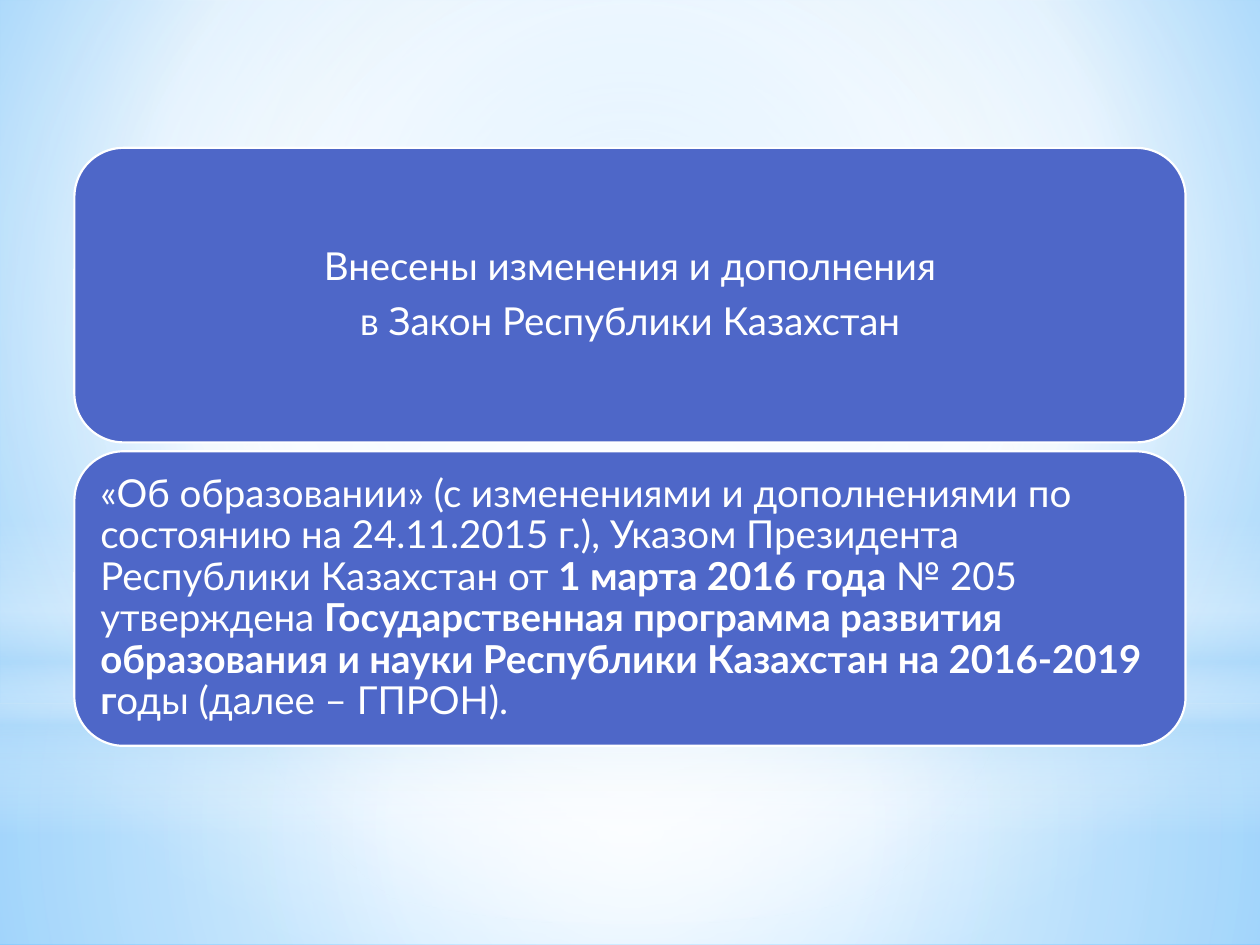
from lxml.etree import SubElement
from pptx import Presentation
from pptx.dml.color import RGBColor
from pptx.enum.shapes import MSO_SHAPE
from pptx.enum.text import MSO_ANCHOR, PP_ALIGN
from pptx.oxml.ns import qn
from pptx.util import Pt

WHITE = RGBColor(0xFF, 0xFF, 0xFF)
CARD_BLUE = RGBColor(0x4E, 0x67, 0xC8)
PALE_BLUE = RGBColor(0xB4, 0xDC, 0xFA)
SKY = RGBColor(0x9E, 0xD5, 0xFF)
DEEP_SKY = RGBColor(0x5B, 0xB9, 0xFF)

PAGE_WIDTH, PAGE_HEIGHT = 720, 540
CARD_LEFT, CARD_TOP, CARD_WIDTH, CARD_HEIGHT = 42.5, 84.5, 635, 168.3
CARD_PITCH = 173.4
CENTRE = (50, 50, 50, 50)

HEADING = [
    [("Внесены изменения и дополнения", False)],
    [("в Закон Республики Казахстан", False)],
]
DETAILS = [[
    ("«Об образовании» (с изменениями и дополнениями по состоянию на "
     "24.11.2015 г.), Указом Президента Республики Казахстан от ", False),
    ("1 марта 2016 года ", True),
    ("№ 205 утверждена ", False),
    ("Государственная программа развития образования и науки "
     "Республики Казахстан на 2016-2019 г", True),
    ("оды (далее – ГПРОН).", False),
]]


def set_gradient(fill, owner, stops, focus=None):
    fill.solid()
    fill.fore_color.rgb = WHITE
    solid = owner.find(".//" + qn("a:solidFill"))
    gradient = solid.makeelement(qn("a:gradFill"), {"rotWithShape": "1"})
    stop_list = SubElement(gradient, qn("a:gsLst"))
    for position, color, opacity in stops:
        stop = SubElement(stop_list, qn("a:gs"), pos=str(position * 1000))
        shade = SubElement(stop, qn("a:srgbClr"), val=str(color))
        if opacity < 100:
            SubElement(shade, qn("a:alpha"), val=str(opacity * 1000))
    if focus:
        circle = SubElement(gradient, qn("a:path"), {"path": "circle"})
        sides = {side: str(share * 1000) for side, share in zip("ltrb", focus)}
        SubElement(circle, qn("a:fillToRect"), sides)
    else:
        SubElement(gradient, qn("a:lin"), ang="5400000", scaled="0")
    solid.getparent().replace(solid, gradient)


def add_glow(page, kind, top, height, stops, focus=None):
    glow = page.shapes.add_shape(kind, 0, Pt(top), Pt(PAGE_WIDTH), Pt(height))
    glow.shadow.inherit = False
    glow.line.fill.background()
    set_gradient(glow.fill, glow.element, stops, focus)


def add_backdrop(page):
    set_gradient(page.background.fill, page.element,
                 [(0, SKY, 100), (60, WHITE, 100), (100, DEEP_SKY, 100)],
                 (20, 10, 20, 60))
    add_glow(page, MSO_SHAPE.RECTANGLE, 402, 138,
             [(0, WHITE, 91), (37, WHITE, 76), (100, PALE_BLUE, 79)], CENTRE)
    add_glow(page, MSO_SHAPE.RECTANGLE, 0, 402,
             [(0, WHITE, 89), (48, WHITE, 62), (100, PALE_BLUE, 79)], CENTRE)
    add_glow(page, MSO_SHAPE.RECTANGLE, 297, 180,
             [(0, WHITE, 0), (29, WHITE, 30), (45, PALE_BLUE, 40),
              (55, WHITE, 26), (65, PALE_BLUE, 60), (100, WHITE, 0)])
    add_glow(page, MSO_SHAPE.OVAL, 126, 402,
             [(0, WHITE, 100), (56, WHITE, 0)], CENTRE)


def add_card(page, top, paragraphs, alignment):
    card = page.shapes.add_shape(MSO_SHAPE.ROUNDED_RECTANGLE, Pt(CARD_LEFT),
                                 Pt(top), Pt(CARD_WIDTH), Pt(CARD_HEIGHT))
    card.shadow.inherit = False
    card.fill.solid()
    card.fill.fore_color.rgb = CARD_BLUE
    card.line.color.rgb = WHITE
    card.line.width = Pt(1.25)
    box = card.text_frame
    box.word_wrap = True
    box.vertical_anchor = MSO_ANCHOR.MIDDLE
    box.margin_left = box.margin_right = Pt(6.6)
    box.margin_top = box.margin_bottom = Pt(6.6)
    for index, spans in enumerate(paragraphs):
        para = box.add_paragraph() if index else box.paragraphs[0]
        para.alignment = alignment
        para.line_spacing = 0.9
        para.space_after = Pt(7.7)
        for text, bold in spans:
            span = para.add_run()
            span.text = text
            span.font.name = "Lato"
            span.font.size = Pt(22)
            span.font.bold = bold
            span.font.color.rgb = WHITE


def main():
    deck = Presentation()
    deck.slide_width, deck.slide_height = Pt(PAGE_WIDTH), Pt(PAGE_HEIGHT)
    page = deck.slides.add_slide(deck.slide_layouts[6])
    add_backdrop(page)
    cards = [(HEADING, PP_ALIGN.CENTER), (DETAILS, PP_ALIGN.LEFT)]
    for index, (paragraphs, alignment) in enumerate(cards):
        add_card(page, CARD_TOP + index * CARD_PITCH, paragraphs, alignment)
    deck.save("out.pptx")


if __name__ == "__main__":
    main()
